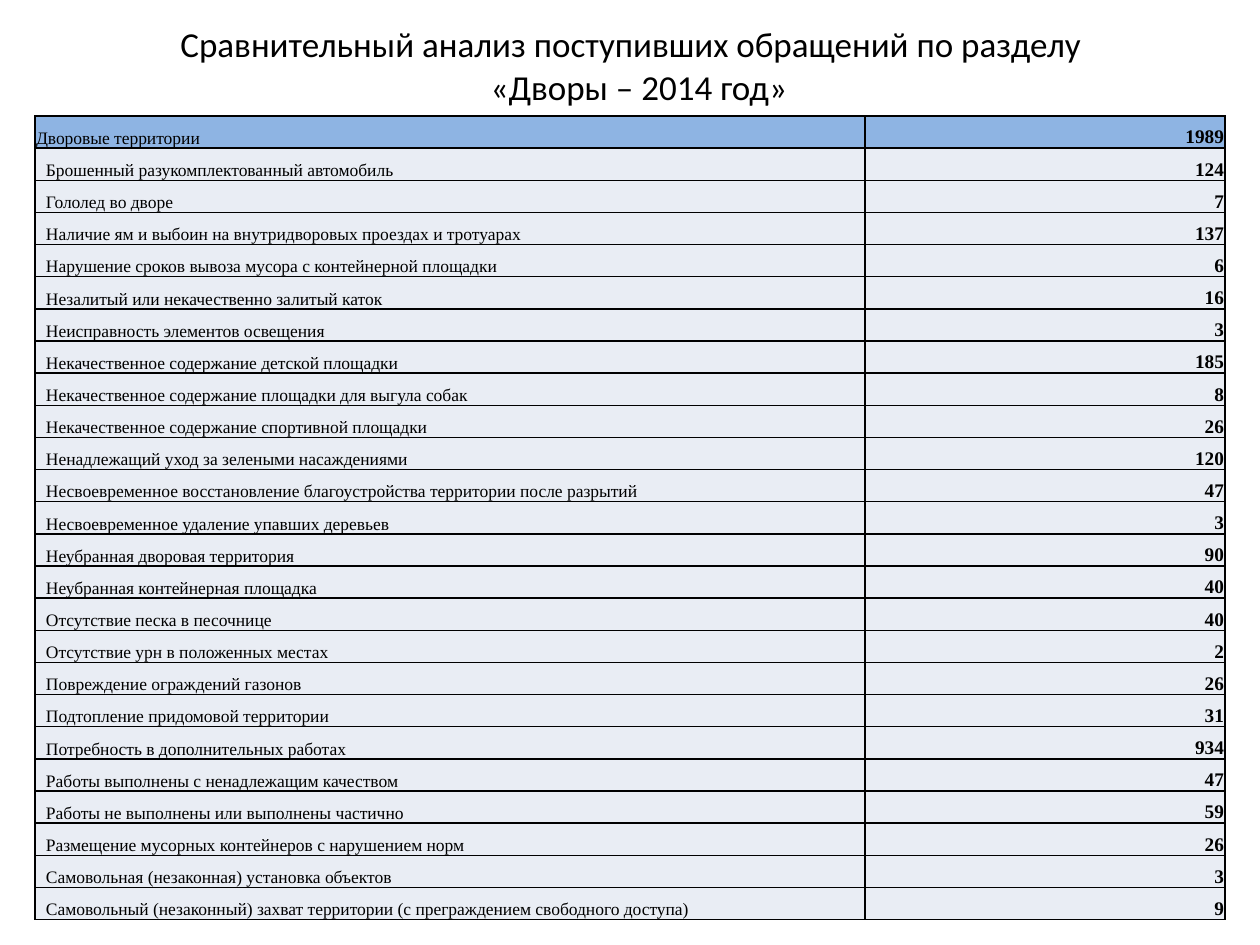
from lxml import etree
from pptx import Presentation
from pptx.dml.color import RGBColor
from pptx.enum.text import MSO_ANCHOR, PP_ALIGN
from pptx.oxml.ns import qn
from pptx.util import Emu, Pt

LEFT, CENTER, RIGHT = PP_ALIGN.LEFT, PP_ALIGN.CENTER, PP_ALIGN.RIGHT
MIDDLE, BOTTOM = MSO_ANCHOR.MIDDLE, MSO_ANCHOR.BOTTOM
PX_PER_INCH = 126

TITLE_LINES = ["Сравнительный анализ поступивших обращений по разделу",
               "«Дворы – 2014 год»"]
ROWS = [
    ("Дворовые территории", 1989),
    ("Брошенный разукомплектованный автомобиль", 124),
    ("Гололед во дворе", 7),
    ("Наличие ям и выбоин на внутридворовых проездах и тротуарах", 137),
    ("Нарушение сроков вывоза мусора с контейнерной площадки", 6),
    ("Незалитый или некачественно залитый каток", 16),
    ("Неисправность элементов освещения", 3),
    ("Некачественное содержание детской площадки", 185),
    ("Некачественное содержание площадки для выгула собак", 8),
    ("Некачественное содержание спортивной площадки", 26),
    ("Ненадлежащий уход за зелеными насаждениями", 120),
    ("Несвоевременное восстановление благоустройства территории после разрытий", 47),
    ("Несвоевременное удаление упавших деревьев", 3),
    ("Неубранная дворовая территория", 90),
    ("Неубранная контейнерная площадка", 40),
    ("Отсутствие песка в песочнице", 40),
    ("Отсутствие урн в положенных местах", 2),
    ("Повреждение ограждений газонов", 26),
    ("Подтопление придомовой территории", 31),
    ("Потребность в дополнительных работах", 934),
    ("Работы выполнены с ненадлежащим качеством", 47),
    ("Работы не выполнены или выполнены частично", 59),
    ("Размещение мусорных контейнеров с нарушением норм", 26),
    ("Самовольная (незаконная) установка объектов", 3),
    ("Самовольный (незаконный) захват территории (с преграждением свободного доступа)", 9),
]


def px(n):
    return Emu(round(n * 914400 / PX_PER_INCH))


def rgb(value):
    return RGBColor.from_string(value)


class SlideBuilder:
    ink, header_fill, row_fill = "000000", "8EB4E3", "E9EDF4"
    title_font = {"name": "Calibri", "size": Pt(20), "bold": False}
    label_font = {"name": "Times New Roman", "size": Pt(10), "bold": False}
    count_font = {"name": "Times New Roman", "size": Pt(11), "bold": True}

    def __init__(self, s):
        self.s = s

    def add_text(self, p, text, font, align):
        p.alignment = align
        r = p.add_run()
        r.text = text
        for name, value in font.items():
            setattr(r.font, name, value)
        r.font.color.rgb = rgb(self.ink)

    def title(self, lines, left, top, width, height, second_indent):
        sp = self.s.shapes.title
        sp.left, sp.top, sp.width, sp.height = map(px, (left, top, width, height))
        tf = sp.text_frame
        tf.vertical_anchor = MIDDLE
        for i, line in enumerate(lines):
            p = tf.add_paragraph() if i else tf.paragraphs[0]
            self.add_text(p, line, self.title_font, CENTER)
            if i:
                p._p.get_or_add_pPr().set("marL", str(px(second_indent)))

    def borders(self, cell):
        tc_pr = cell._tc.get_or_add_tcPr()
        for i, side in enumerate(("lnL", "lnR", "lnT", "lnB")):
            ln = etree.Element(qn("a:" + side), w=str(Pt(1)))
            fill = etree.SubElement(ln, qn("a:solidFill"))
            etree.SubElement(fill, qn("a:srgbClr"), val=self.ink)
            tc_pr.insert(i, ln)

    def cell(self, cell, text, font, align, fill, indent):
        margins = {"margin_left": px(indent), "margin_top": px(1),
                   "margin_right": px(1), "margin_bottom": 0}
        for name, value in margins.items():
            setattr(cell, name, value)
        cell.vertical_anchor = BOTTOM
        cell.fill.solid()
        cell.fill.fore_color.rgb = rgb(fill)
        self.add_text(cell.text_frame.paragraphs[0], text, font, align)
        self.borders(cell)

    def table(self, rows, left, top, widths, height):
        frame = self.s.shapes.add_table(len(rows), len(widths), px(left), px(top),
                                        px(sum(widths)), px(height))
        table = frame.table
        table.first_row = table.horz_banding = False
        for column, width in zip(table.columns, widths):
            column.width = px(width)
        for i, (label, count) in enumerate(rows):
            fill, indent = (self.row_fill, 11) if i else (self.header_fill, 1)
            self.cell(table.cell(i, 0), label, self.label_font, LEFT, fill, indent)
            self.cell(table.cell(i, 1), str(count), self.count_font, RIGHT, fill, 1)


def main():
    prs = Presentation()
    prs.slide_width, prs.slide_height = px(1260), px(945)
    title_only = prs.slide_layouts[5]
    builder = SlideBuilder(prs.slides.add_slide(title_only))

    # Heading
    builder.title(TITLE_LINES, 64, -14, 1134, 158, second_indent=16)

    # Requests by topic, total first
    builder.table(ROWS, 35, 116, (830, 360), 804)

    prs.save("out.pptx")


if __name__ == "__main__":
    main()
